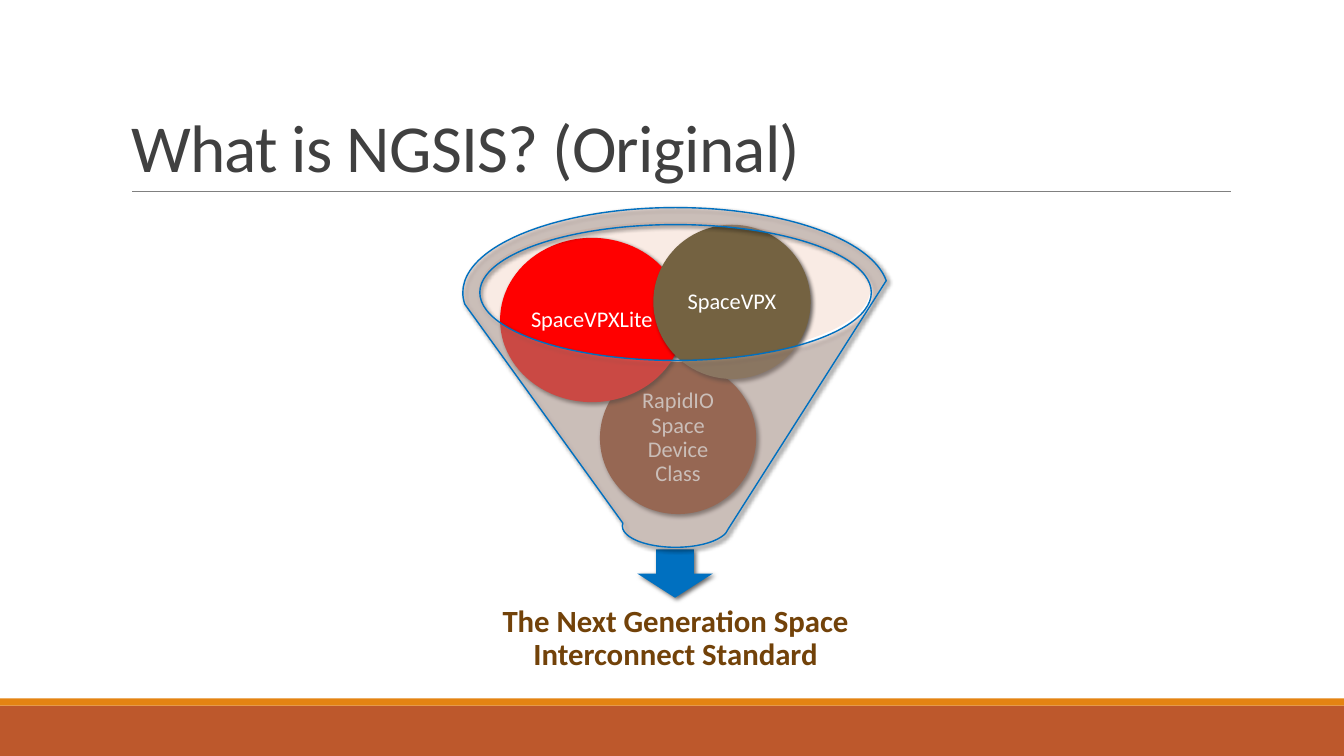
"""Build the NGSIS funnel slide."""
import lxml.etree
import pptx
import pptx.dml.color
import pptx.enum.shapes
import pptx.enum.text
import pptx.oxml.ns
import pptx.util

Inches = pptx.util.Inches
Pt = pptx.util.Pt
SHAPE = pptx.enum.shapes.MSO_SHAPE
ALIGN = pptx.enum.text.PP_ALIGN
ANCHOR = pptx.enum.text.MSO_ANCHOR
qn = pptx.oxml.ns.qn

COLORS = {
    "footer": "BD582C", "stripe": "E48312", "rule": "808080", "title": "404040",
    "rim": "F2CDBD", "funnel": "D7B8AB", "blue": "0070C0", "outcome": "724209",
    "rapidio": "8E4221", "lite": "FF0000", "vpx": "746241",
    "white": "FFFFFF", "shadow": "000000",
}


def add_part(kind, box, color, opacity=100, blur=0):
    part = slide.shapes.add_shape(kind, *map(Inches, box))
    part.fill.solid()
    part.fill.fore_color.rgb = pptx.dml.color.RGBColor.from_string(COLORS[color])
    part.line.fill.background()
    part.shadow.inherit = False
    properties = part._element.spPr
    if opacity < 100:
        tint = properties.find(qn("a:solidFill")).find(qn("a:srgbClr"))
        lxml.etree.SubElement(tint, qn("a:alpha"), val=str(opacity * 1000))
    if blur:
        cast = lxml.etree.SubElement(
            properties.find(qn("a:effectLst")), qn("a:outerShdw"),
            blurRad=str(Pt(blur)), dist=str(Pt(2)), dir=str(45 * 60000),
            algn="ctr", rotWithShape="0")
        shade = lxml.etree.SubElement(cast, qn("a:srgbClr"), val=COLORS["shadow"])
        lxml.etree.SubElement(shade, qn("a:alpha"), val="60000")
    return part


def write(holder, text, size, color, spacing, align, anchor, inset, bold=False):
    frame = holder.text_frame
    frame.word_wrap = True
    frame.auto_size = pptx.enum.text.MSO_AUTO_SIZE.NONE
    frame.vertical_anchor = anchor
    frame.margin_left = frame.margin_right = Inches(inset)
    frame.margin_top = frame.margin_bottom = Inches(min(inset, 0.05))
    paragraph = frame.paragraphs[0]
    paragraph.alignment = align
    paragraph.line_spacing = spacing
    run = paragraph.add_run()
    run.text = text
    run.font.name = "Calibri"
    run.font.size = Pt(size)
    run.font.bold = bold
    run.font.color.rgb = pptx.dml.color.RGBColor.from_string(COLORS[color])
    return run


deck = pptx.Presentation()
deck.slide_width = Inches(13.33)
deck.slide_height = Inches(7.5)
slide = deck.slides.add_slide(deck.slide_layouts[5])

add_part(SHAPE.RECTANGLE, (0, 7, 13.33, 0.5), "footer")
add_part(SHAPE.RECTANGLE, (0, 6.93, 13.33, 0.07), "stripe")

title_rule = slide.shapes.add_connector(
    pptx.enum.shapes.MSO_CONNECTOR.STRAIGHT,
    Inches(1.31), Inches(1.9), Inches(12.21), Inches(1.9))
title_rule.line.color.rgb = pptx.dml.color.RGBColor.from_string(COLORS["rule"])
title_rule.line.width = Pt(0.5)
lxml.etree.SubElement(title_rule._element.spPr, qn("a:effectLst"))

title = slide.shapes.title
title.left, title.top = Inches(1.2), Inches(0.31)
title.width, title.height = Inches(11), Inches(1.59)
heading = write(title, "What is NGSIS? (Original)", 48, "title", 0.85,
                ALIGN.LEFT, ANCHOR.BOTTOM, 0.1)
heading._r.get_or_add_rPr().set("spc", "-50")

add_part(SHAPE.OVAL, (4.75, 2.2, 3.88, 1.35), "rim", opacity=40)
add_part(SHAPE.DOWN_ARROW, (6.32, 5.45, 0.75, 0.48), "blue", blur=3.5)

outcome = slide.shapes.add_textbox(*map(Inches, (4.68, 5.76, 4.04, 1.16)))
write(outcome, "The Next Generation Space Interconnect Standard", 22, "outcome",
      0.9, ALIGN.CENTER, ANCHOR.MIDDLE, 0.17, bold=True)

ingredients = [
    ("RapidIO Space Device Class", (5.95, 3.59, 1.55, 1.51), "rapidio"),
    ("SpaceVPXLite", (4.96, 2.36, 1.82, 1.63), "lite"),
    ("SpaceVPX", (6.48, 2.23, 1.56, 1.53), "vpx"),
]
for label, box, color in ingredients:
    ball = add_part(SHAPE.OVAL, box, color, blur=3)
    write(ball, label, 16, "white", 0.9, ALIGN.CENTER, ANCHOR.MIDDLE, 0.02)

funnel = add_part(SHAPE.FUNNEL, (4.59, 2.06, 4.22, 3.37), "funnel", opacity=40, blur=3)
funnel.line.color.rgb = pptx.dml.color.RGBColor.from_string(COLORS["blue"])
funnel.line.width = Pt(1)

deck.save("out.pptx")
